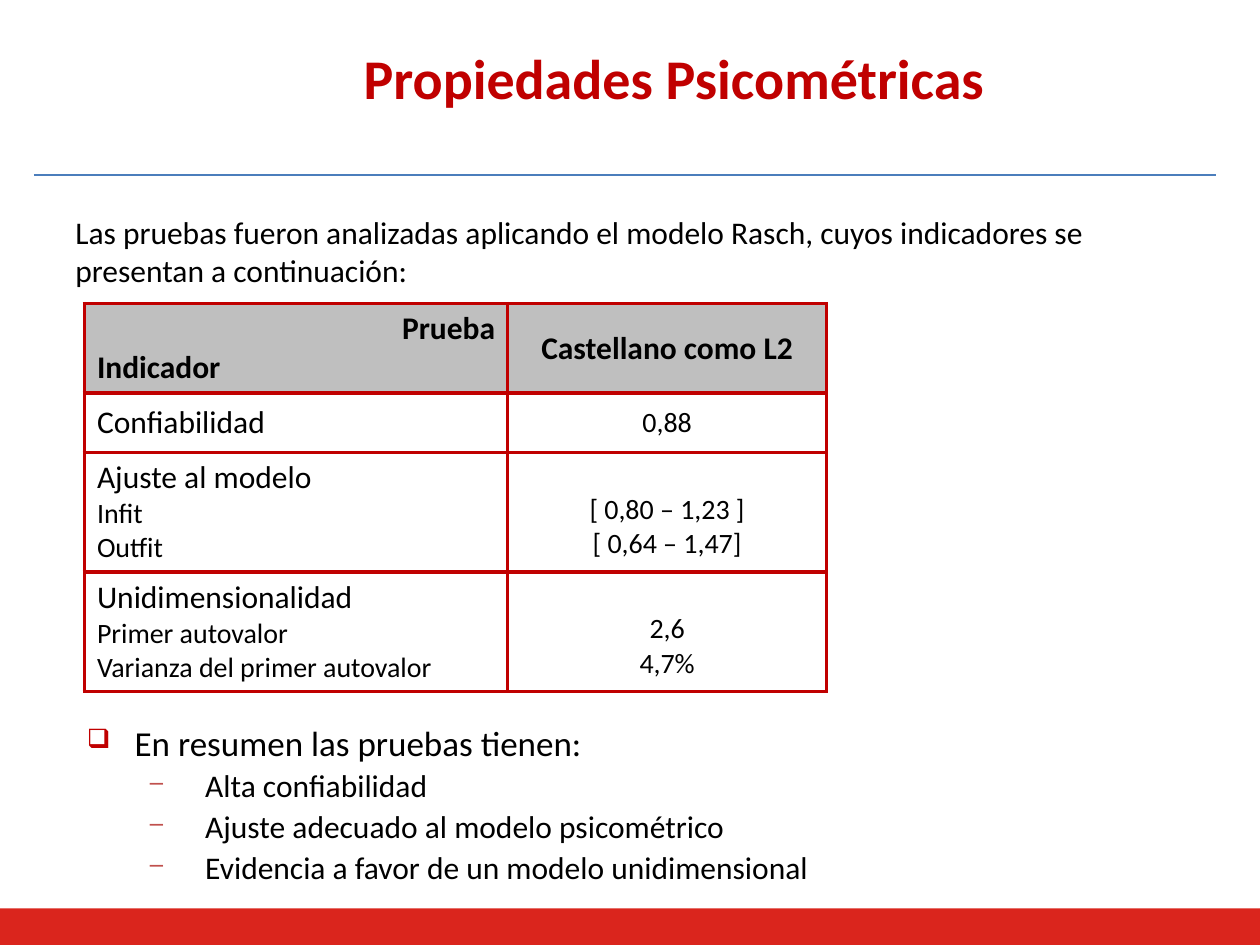
from dataclasses import dataclass

from lxml.etree import SubElement
from pptx import Presentation
from pptx.dml.color import RGBColor
from pptx.enum.shapes import MSO_CONNECTOR, MSO_SHAPE
from pptx.enum.text import MSO_ANCHOR, PP_ALIGN
from pptx.oxml.ns import qn
from pptx.slide import Slide
from pptx.util import Inches, Pt


def color(hex_string):
    """Turn a hex string into a colour."""
    return RGBColor.from_string(hex_string)


def grid(*units):
    """Turn grid units, 100 columns by 75 rows on the slide, into lengths."""
    return [Inches(unit / 10) for unit in units]


@dataclass
class Deck:
    """Hold the style and the current slide."""

    slide: Slide
    font: str = "Calibri"
    ink: str = "000000"
    accent: str = "C00000"
    band: str = "DA251D"
    rule: str = "4B7EBC"
    header: str = "BFBFBF"

    def style(self, paragraph, size, bold=False, ink=None, align=PP_ALIGN.LEFT):
        """Format a paragraph and its runs."""
        paragraph.alignment = align
        for run in paragraph.runs:
            run.font.name = self.font
            run.font.size = Pt(size)
            run.font.bold = bold
            run.font.color.rgb = color(ink or self.ink)

    def text(self, area, wording, size, anchor=MSO_ANCHOR.TOP, **look):
        """Add a wrapped text box and return its frame."""
        frame = self.slide.shapes.add_textbox(*grid(*area)).text_frame
        frame.word_wrap = True
        frame.vertical_anchor = anchor
        frame.text = wording
        for paragraph in frame.paragraphs:
            self.style(paragraph, size, **look)
        return frame

    def footer(self, area):
        """Add the solid band at the foot."""
        band = self.slide.shapes.add_shape(MSO_SHAPE.RECTANGLE, *grid(*area))
        band.shadow.inherit = False
        band.fill.solid()
        band.fill.fore_color.rgb = color(self.band)
        band.line.fill.background()

    def divider(self, left, right, row):
        """Add a thin horizontal line."""
        line = self.slide.shapes.add_connector(
            MSO_CONNECTOR.STRAIGHT, *grid(left, row, right, row))
        line.line.color.rgb = color(self.rule)
        line.line.width = Pt(0.75)
        SubElement(line._element.spPr, qn("a:effectLst"))

    def borders(self, cell):
        """Draw all four borders of a cell."""
        properties = cell._tc.get_or_add_tcPr()
        for side in ("lnL", "lnR", "lnT", "lnB"):
            edge = SubElement(properties, qn(f"a:{side}"), w=str(Pt(2.25)))
            fill = SubElement(edge, qn("a:solidFill"))
            SubElement(fill, qn("a:srgbClr"), val=self.accent)

    def cell(self, cell, lines, fill=None, anchor=MSO_ANCHOR.MIDDLE, drop=0.5):
        """Fill a cell with (wording, size, alignment) lines."""
        self.borders(cell)
        if fill:
            cell.fill.solid()
            cell.fill.fore_color.rgb = color(fill)
        else:
            cell.fill.background()
        cell.vertical_anchor = anchor
        cell.margin_left, cell.margin_top, cell.margin_right, cell.margin_bottom = grid(
            1, drop, 1, 0.5)
        cell.text_frame.text = "\n".join(wording for wording, _, _ in lines)
        for paragraph, (_, size, align) in zip(cell.text_frame.paragraphs, lines):
            self.style(paragraph, size, bold=bool(fill), align=align)

    def indicators(self, left, top, columns, rows, headings, records):
        """Add the table of indicators."""
        table = self.slide.shapes.add_table(
            len(rows), len(columns),
            *grid(left, top, sum(columns), sum(rows))).table
        table.first_row = table.horz_banding = False
        for column, width in zip(table.columns, grid(*columns)):
            column.width = width
        for row, height in zip(table.rows, grid(*rows)):
            row.height = height
        corner, test = headings
        self.cell(table.cell(0, 0), [(wording, 18, align) for wording, align in corner],
                  self.header, MSO_ANCHOR.TOP)
        self.cell(table.cell(0, 1), [(test, 18, PP_ALIGN.CENTER)], self.header)
        for number, (name, details, values) in enumerate(records, 1):
            anchor = MSO_ANCHOR.TOP if details else MSO_ANCHOR.MIDDLE
            labels = [(name, 18, PP_ALIGN.LEFT)]
            labels += [(detail, 16, PP_ALIGN.LEFT) for detail in details]
            self.cell(table.cell(number, 0), labels, anchor=anchor)
            self.cell(table.cell(number, 1),
                      [(value, 16, PP_ALIGN.CENTER) for value in values],
                      anchor=anchor, drop=3.2 if details else 0.5)

    def bullet(self, paragraph, mark, tint, margin, hang):
        """Give a paragraph its bullet, indent and spacing."""
        properties = paragraph._p.get_or_add_pPr()
        indent, first = grid(margin, -hang)
        properties.set("marL", str(indent))
        properties.set("indent", str(first))
        paint = SubElement(properties, qn("a:buClr"))
        SubElement(paint, qn("a:srgbClr"), val=tint)
        SubElement(properties, qn("a:buSzPct"), val="76000")
        SubElement(properties, qn("a:buChar"), char=mark)
        paragraph.line_spacing = 0.8
        paragraph.space_after = Pt(6)

    def summary(self, area, lead, findings):
        """Add the closing list with its lead line."""
        frame = self.text(area, "\n".join([lead, *findings]), 18,
                          align=PP_ALIGN.JUSTIFY)
        first, *others = frame.paragraphs
        self.bullet(first, "❑", self.accent, 3.8, 3.8)
        self.style(first, 20, align=PP_ALIGN.JUSTIFY)
        for finding in others:
            finding.level = 1
            self.bullet(finding, "–", "C0504D", 9.4, 4.4)


def main():
    """Build the slide and save it."""
    presentation = Presentation()
    presentation.slide_width, presentation.slide_height = grid(100, 75)
    deck = Deck(presentation.slides.add_slide(presentation.slide_layouts[6]))
    deck.footer((0, 72.1, 100, 2.9))
    deck.text((8.5, 2.1, 90, 8), "Propiedades Psicométricas", 32, MSO_ANCHOR.MIDDLE,
              bold=True, ink=deck.accent, align=PP_ALIGN.CENTER)
    deck.divider(2.7, 96.5, 13.9)
    deck.text((5, 16.4, 90, 7),
              "Las pruebas fueron analizadas aplicando el modelo Rasch, "
              "cuyos indicadores se presentan a continuación:", 18)
    corner = [("Prueba", PP_ALIGN.RIGHT), ("Indicador", PP_ALIGN.LEFT)]
    records = [
        ("Confiabilidad", [], ["0,88"]),
        ("Ajuste al modelo", ["Infit", "Outfit"], ["[ 0,80 – 1,23 ]", "[ 0,64 – 1,47]"]),
        ("Unidimensionalidad", ["Primer autovalor", "Varianza del primer autovalor"],
         ["2,6", "4,7%"]),
    ]
    deck.indicators(6.7, 24.1, (33.6, 25.3), (7.1, 4.7, 9.5, 9.5),
                    (corner, "Castellano como L2"), records)
    deck.summary((5.9, 57.4, 88.2, 14.5), "En resumen las pruebas tienen:",
                 ["Alta confiabilidad", "Ajuste adecuado al modelo psicométrico",
                  "Evidencia a favor de un modelo unidimensional"])
    presentation.save("out.pptx")


if __name__ == "__main__":
    main()
